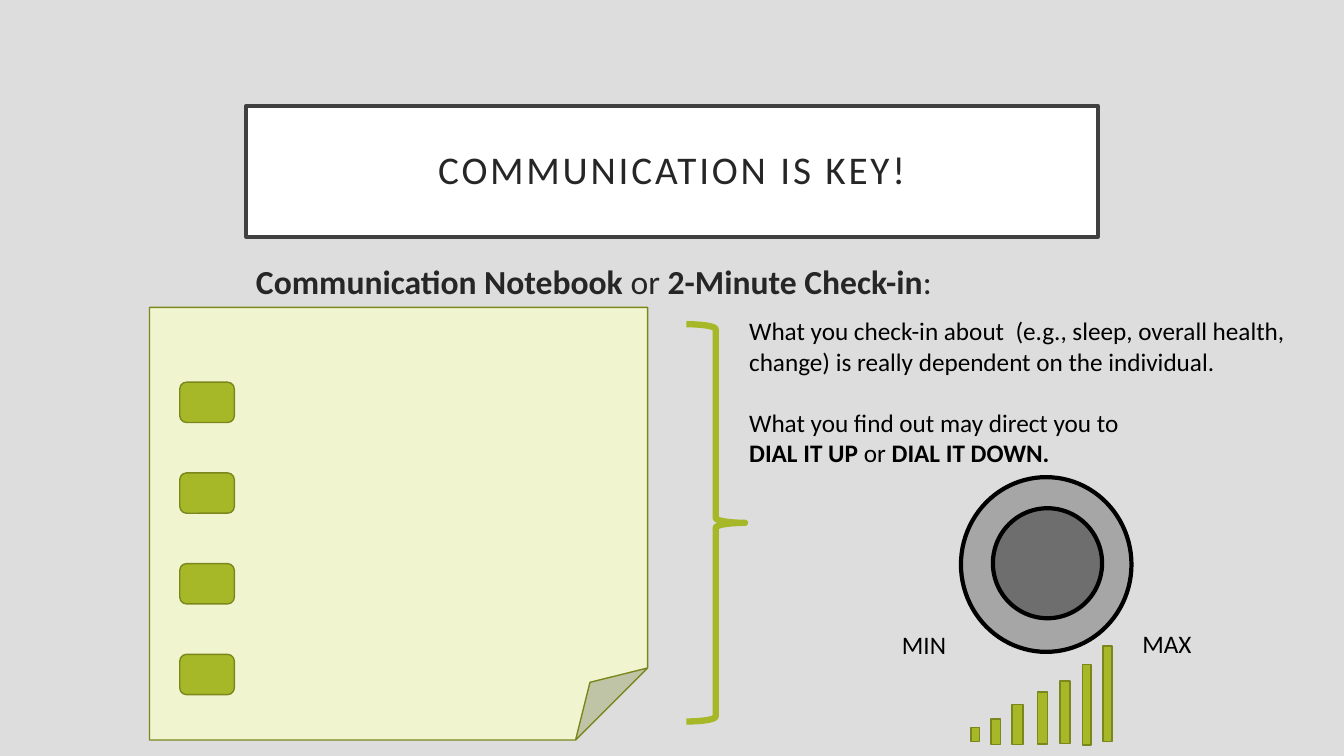
import dataclasses
import typing

import pptx
import pptx.dml.color
import pptx.enum.shapes
import pptx.enum.text
import pptx.util

Color = pptx.dml.color.RGBColor
Kind = pptx.enum.shapes.MSO_SHAPE
Align = pptx.enum.text.PP_ALIGN
Anchor = pptx.enum.text.MSO_ANCHOR

BACK = Color(0xDD, 0xDD, 0xDD)
WHITE = Color(0xFF, 0xFF, 0xFF)
BLACK = Color(0x00, 0x00, 0x00)
INK = Color(0x26, 0x26, 0x26)
FRAME = Color(0x40, 0x40, 0x40)
PAPER = Color(0xF0, 0xF5, 0xD0)
LIME = Color(0xA6, 0xB7, 0x27)
OLIVE = Color(0x7B, 0x87, 0x1D)
SILVER = Color(0xA6, 0xA6, 0xA6)
STEEL = Color(0x6E, 0x6E, 0x6E)

FONT = "Calibri"
COLS, ROWS = 160, 90
WIDE, HIGH = pptx.util.Inches(13.33), pptx.util.Inches(7.5)


class Box(typing.NamedTuple):
    col: float
    row: float
    cols: float
    rows: float

    def place(self) -> tuple[int, int, int, int]:
        return (
            round(self.col * WIDE / COLS),
            round(self.row * HIGH / ROWS),
            round(self.cols * WIDE / COLS),
            round(self.rows * HIGH / ROWS),
        )


class Run(typing.NamedTuple):
    text: str
    bold: bool = False


@dataclasses.dataclass(frozen=True)
class Line:
    runs: tuple[Run, ...]
    before: float = 0


@dataclasses.dataclass(frozen=True)
class Form:
    kind: Kind
    box: Box
    fill: Color | None = LIME
    edge: Color = OLIVE
    width: float = 1


@dataclasses.dataclass(frozen=True)
class Label:
    box: Box
    lines: tuple[Line, ...]
    size: float = 18
    color: Color = BLACK
    wrap: bool = False


CHECKS = [Form(Kind.ROUNDED_RECTANGLE, Box(21.4, 45.5 + 10.8 * step, 6.5, 4.8)) for step in range(4)]

BARS = [
    Form(Kind.RECTANGLE, box)
    for box in (
        Box(115.6, 86.6, 1, 1.7),
        Box(118, 85.6, 1.1, 3),
        Box(120.5, 83.9, 1.3, 4.7),
        Box(123.5, 82.4, 1.2, 6.2),
        Box(126.2, 81.1, 1.2, 7.4),
        Box(128.9, 79.1, 1, 9.6),
        Box(131.3, 76.9, 1.1, 11.4),
    )
]

FORMS = [
    Form(Kind.FOLDED_CORNER, Box(17.8, 36.6, 59.3, 51.5), PAPER),
    *CHECKS,
    Form(Kind.RIGHT_BRACE, Box(81.7, 38.6, 7, 47.3), None, LIME, 4.5),
    Form(Kind.OVAL, Box(114.4, 56.8, 20.3, 20.8), SILVER, BLACK, 3),
    Form(Kind.OVAL, Box(118.2, 60.5, 13, 13.1), STEEL, BLACK, 3),
    *BARS,
]

LABELS = [
    Label(
        Box(29.3, 30.5, 101.4, 5.8),
        (
            Line((
                Run("Communication Notebook ", True),
                Run("or "),
                Run("2-Minute Check-in", True),
                Run(":"),
            )),
        ),
        24,
        INK,
        True,
    ),
    Label(
        Box(88, 37, 66.6, 19.4),
        (
            Line((Run("What you check-in about  (e.g., sleep, overall health,"),)),
            Line((Run("change) is really dependent on the individual."),)),
            Line((Run("What you find out may direct you to"),), 22),
            Line((Run("DIAL IT UP ", True), Run("or "), Run("DIAL IT DOWN.", True))),
        ),
    ),
    Label(Box(106.2, 74.3, 7.9, 4.8), (Line((Run("MIN"),)),)),
    Label(Box(134.8, 74.2, 9, 4.8), (Line((Run("MAX"),)),)),
]


def move(shape: typing.Any, box: Box) -> None:
    shape.left, shape.top, shape.width, shape.height = box.place()


def paint(shape: typing.Any, fill: Color | None, edge: Color, width: float) -> None:
    if fill is None:
        shape.fill.background()
    else:
        shape.fill.solid()
        shape.fill.fore_color.rgb = fill
    shape.line.color.rgb = edge
    shape.line.width = pptx.util.Pt(width)


def write(para: typing.Any, run: Run, size: float, color: Color) -> typing.Any:
    part = para.add_run()
    part.text = run.text
    part.font.name = FONT
    part.font.size = pptx.util.Pt(size)
    part.font.bold = run.bold
    part.font.color.rgb = color
    return part


def head(slide: typing.Any) -> None:
    title = slide.shapes.title
    move(title, Box(29.3, 12.6, 101.4, 15.6))
    paint(title, WHITE, FRAME, 2.5)
    frame = title.text_frame
    frame.vertical_anchor = Anchor.MIDDLE
    para = frame.paragraphs[0]
    para.alignment = Align.CENTER
    para.line_spacing = 0.9
    part = write(para, Run("COMMUNICATION IS KEY!"), 28, INK)
    part.font._element.set("spc", "200")


def draw(slide: typing.Any, form: Form) -> None:
    shape = slide.shapes.add_shape(form.kind, *form.box.place())
    shape.shadow.inherit = False
    paint(shape, form.fill, form.edge, form.width)


def note(slide: typing.Any, label: Label) -> None:
    frame = slide.shapes.add_textbox(*label.box.place()).text_frame
    frame.word_wrap = label.wrap
    for index, line in enumerate(label.lines):
        para = frame.add_paragraph() if index else frame.paragraphs[0]
        para.alignment = Align.LEFT
        para.space_before = pptx.util.Pt(line.before)
        for run in line.runs:
            write(para, run, label.size, label.color)


def main() -> None:
    deck = pptx.Presentation()
    deck.slide_width, deck.slide_height = WIDE, HIGH
    slide = deck.slides.add_slide(deck.slide_layouts.get_by_name("Title Only"))
    slide.background.fill.solid()
    slide.background.fill.fore_color.rgb = BACK
    head(slide)
    for form in FORMS:
        draw(slide, form)
    for label in LABELS:
        note(slide, label)
    deck.save("out.pptx")


if __name__ == "__main__":
    main()
